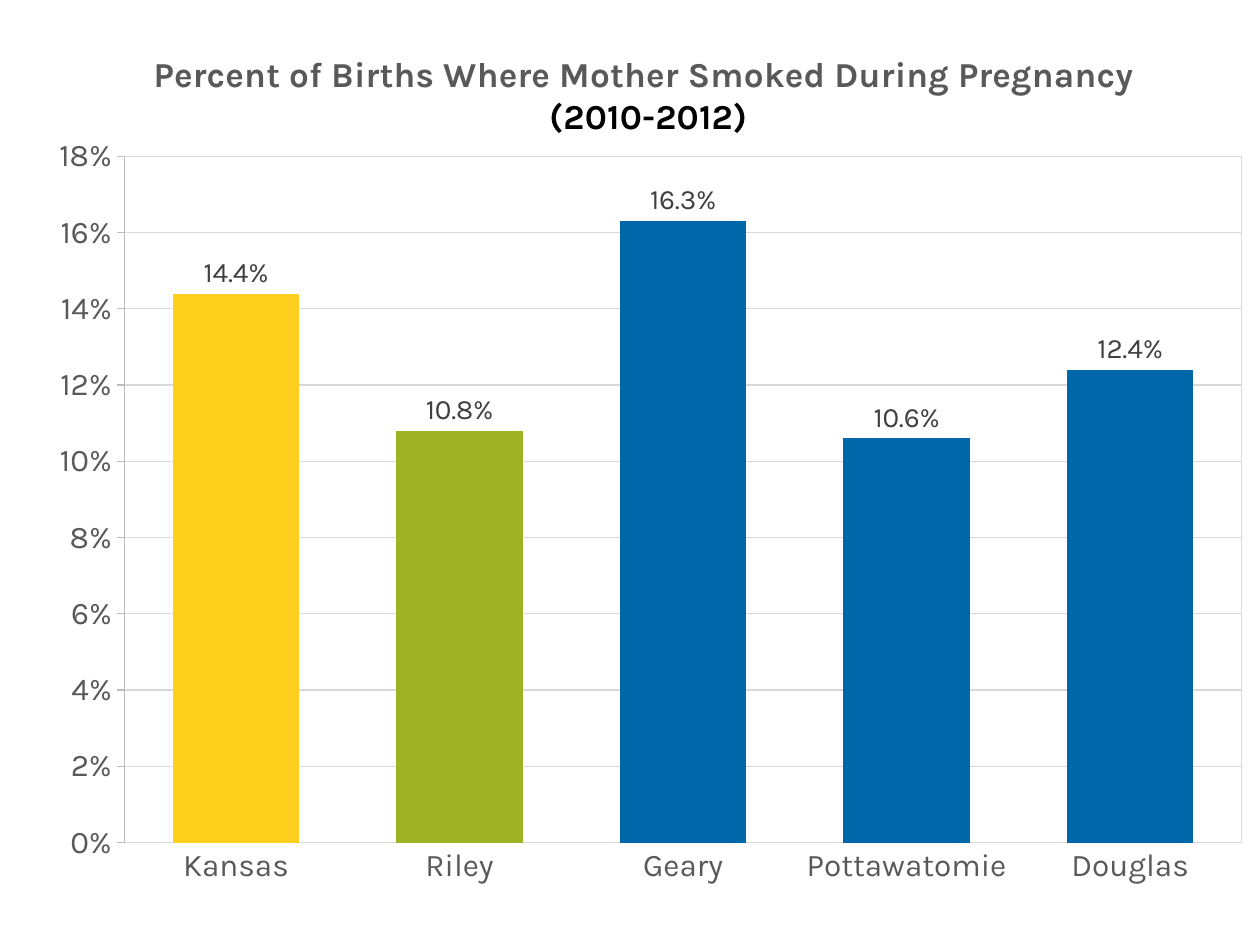
from lxml.etree import SubElement
from pptx import Presentation
from pptx.chart.data import CategoryChartData
from pptx.dml.color import RGBColor
from pptx.enum.chart import XL_CHART_TYPE as ChartType
from pptx.enum.chart import XL_LABEL_POSITION as LabelPosition
from pptx.enum.chart import XL_TICK_MARK as TickMark
from pptx.oxml import parse_xml
from pptx.oxml.ns import nsdecls, qn
from pptx.util import Pt

PX = 914400 / 126
COLORS = {
    "title": "595959", "period": "000000", "axis_text": "595959",
    "label": "404040", "grid": "D9D9D9", "value_axis": "BDBDBD",
    "state": "FFCF1D", "home": "9EB323", "peer": "0067AA",
}
BIRTHS = [
    ("Kansas", 0.144, "state"),
    ("Riley", 0.108, "home"),
    ("Geary", 0.163, "peer"),
    ("Pottawatomie", 0.106, "peer"),
    ("Douglas", 0.124, "peer"),
]
TITLE = [
    ("Percent of Births Where Mother Smoked During Pregnancy ", "title"),
    ("(2010-2012)", "period"),
]


def px(length):
    return round(length * PX)


def rgb(name):
    return RGBColor.from_string(COLORS[name])


def style_font(font, size, color, bold=False):
    font.name = "Karla"
    font.size = Pt(size)
    font.bold = bold
    font.color.rgb = rgb(color)


def style_line(line, color):
    line.color.rgb = rgb(color)
    line.width = Pt(0.75)


def set_layout(parent, index, **settings):
    """Give a chart part a manual layout, as fractions of the chart."""
    old = parent.find(qn("c:layout"))
    if old is not None:
        parent.remove(old)
    layout = parse_xml(f"<c:layout {nsdecls('c')}><c:manualLayout/></c:layout>")
    for tag, value in settings.items():
        SubElement(layout[0], qn(f"c:{tag}")).set("val", str(value))
    parent.insert(index, layout)


def add_title(chart):
    title = chart.chart_title
    frame = title.text_frame
    frame.text = "\n".join(text for text, _ in TITLE)
    for paragraph, (_, color) in zip(frame.paragraphs, TITLE):
        style_font(paragraph.runs[0].font, 20, color, bold=True)
    title.include_in_layout = False
    set_layout(title._element, 1, xMode="edge", yMode="edge", x=0.11, y=0.03)


def style_axes(chart):
    categories, values = chart.category_axis, chart.value_axis
    for axis, line in ((categories, "grid"), (values, "value_axis")):
        style_font(axis.tick_labels.font, 18, "axis_text")
        style_line(axis.format.line, line)
    categories.major_tick_mark = TickMark.NONE
    values.major_tick_mark = TickMark.OUTSIDE
    values.minimum_scale, values.maximum_scale = 0, 0.18
    values.major_unit = 0.02
    values.tick_labels.number_format = "0%"
    values.tick_labels.number_format_is_linked = False
    values.has_major_gridlines = True
    style_line(values.major_gridlines.format.line, "grid")


def style_bars(plot):
    plot.gap_width = 77
    plot.vary_by_categories = False
    series = plot.series[0]
    for index, (_, _, color) in enumerate(BIRTHS):
        fill = series.points[index].format.fill
        fill.solid()
        fill.fore_color.rgb = rgb(color)
    labels = series.data_labels
    labels.show_value = True
    labels.number_format = "0.0%"
    labels.number_format_is_linked = False
    labels.position = LabelPosition.OUTSIDE_END
    style_font(labels.font, 16, "label")


def frame_plot_area(chart):
    """Fix the inner plot area and outline it like the gridlines."""
    area = chart._chartSpace.chart.plotArea
    set_layout(area, 0, layoutTarget="inner", xMode="edge", yMode="edge",
               x=0.09, y=0.15, w=0.88, h=0.76)
    area.append(parse_xml(
        f'<c:spPr {nsdecls("c", "a")}><a:noFill/><a:ln w="{Pt(0.75)}"><a:solidFill>'
        f'<a:srgbClr val="{COLORS["grid"]}"/></a:solidFill></a:ln></c:spPr>'))


def add_smoking_chart(slide, left, top, width, height):
    data = CategoryChartData(number_format="0.0%")
    data.categories = [place for place, _, _ in BIRTHS]
    data.add_series("Series 1", [share for _, share, _ in BIRTHS])
    box = [px(length) for length in (left, top, width, height)]
    chart = slide.shapes.add_chart(ChartType.COLUMN_CLUSTERED, *box, data).chart
    chart.has_legend = False
    chart.font.name = "Cabin"
    chart.font.size = Pt(10)
    add_title(chart)
    style_axes(chart)
    style_bars(chart.plots[0])
    frame_plot_area(chart)


def main():
    deck = Presentation()
    deck.slide_width, deck.slide_height = px(1260), px(945)
    slide = deck.slides.add_slide(deck.slide_layouts[6])
    add_smoking_chart(slide, 10, 21, 1270, 903)
    deck.save("out.pptx")


if __name__ == "__main__":
    main()
